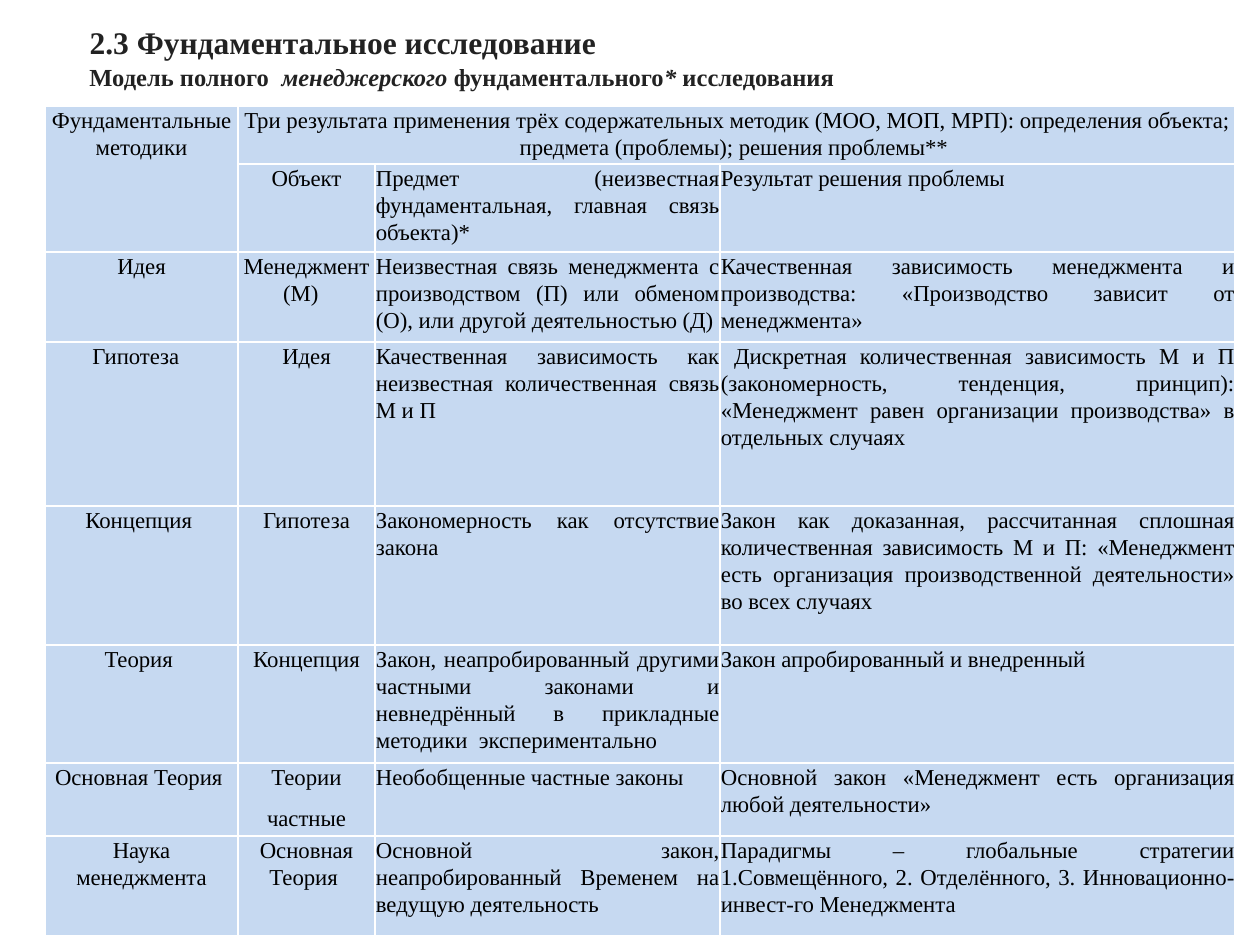
"""Build the slide with the table of the full model of fundamental research."""
from lxml.etree import SubElement
from pptx import Presentation
from pptx.dml.color import RGBColor
from pptx.enum.text import MSO_ANCHOR, MSO_AUTO_SIZE, PP_ALIGN
from pptx.oxml.ns import qn
from pptx.util import Emu, Pt

FONT = "Times New Roman"
INK = RGBColor(0x22, 0x22, 0x22)
BLACK = RGBColor(0, 0, 0)
WHITE = RGBColor(0xFF, 0xFF, 0xFF)
BLUE = RGBColor(0xC6, 0xD9, 0xF1)

TITLE = "2.3 Фундаментальное исследование"
MODEL = [
    ("Модель полного  ", False),
    ("менеджерского", True),
    (" фундаментального", False),
    ("*", True),
    (" исследования ", False),
]
COLS = [193, 137, 345, 515]
ROWS = [58, 88, 90, 164, 139, 118, 73, 100]
CELLS = [
    ["Фундаментальные методики",
     "Три результата применения трёх содержательных методик (МОО, МОП, МРП): "
     "определения объекта; предмета (проблемы); решения проблемы** ", "", ""],
    ["", "Объект",
     "Предмет (неизвестная фундаментальная, главная связь объекта)* ",
     "Результат решения проблемы"],
    ["Идея", "Менеджмент (М)  ",
     "Неизвестная связь менеджмента с производством (П) или обменом (О), "
     "или другой деятельностью (Д)",
     "Качественная зависимость менеджмента и производства: "
     "«Производство зависит от менеджмента» "],
    ["Гипотеза  ", "Идея",
     "Качественная зависимость как неизвестная количественная связь М и П",
     " Дискретная количественная зависимость М и П (закономерность, тенденция, "
     "принцип): «Менеджмент равен организации производства» в отдельных случаях"],
    ["Концепция ", "Гипотеза", "Закономерность как отсутствие закона",
     "Закон как доказанная, рассчитанная сплошная количественная зависимость "
     "М и П: «Менеджмент есть организация производственной деятельности» "
     "во всех случаях"],
    ["Теория ", "Концепция",
     "Закон, неапробированный другими частными законами и невнедрённый "
     "в прикладные методики  экспериментально ",
     "Закон апробированный и внедренный"],
    ["Основная Теория ", "Теории\nчастные", "Необобщенные частные законы",
     "Основной закон «Менеджмент есть организация любой деятельности» "],
    ["Наука менеджмента", "Основная Теория ",
     "Основной закон, неапробированный Временем на ведущую деятельность",
     "Парадигмы – глобальные стратегии 1.Совмещённого, 2. Отделённого, "
     "3. Инновационно-инвест-го Менеджмента"],
]


def px(n):
    return Emu(round(n * 914400 / 126))


def style(run, size, color, bold=False, italic=False):
    font = run.font
    font.name, font.size, font.bold, font.italic = FONT, Pt(size), bold, italic
    font.color.rgb = color


def head(shape, box, parts, size):
    shape.left, shape.top, shape.width, shape.height = map(px, box)
    frame = shape.text_frame
    frame.word_wrap = True
    frame.auto_size = MSO_AUTO_SIZE.NONE
    para = frame.paragraphs[0]
    para.alignment = PP_ALIGN.JUSTIFY
    para._p.get_or_add_pPr().set("indent", str(px(62)))
    for text, italic in parts:
        run = para.add_run()
        run.text = text
        style(run, size, INK, True, italic)


def border(cell):
    props = cell._tc.get_or_add_tcPr()
    for side in ("lnL", "lnR", "lnT", "lnB"):
        line = SubElement(props, qn(f"a:{side}"), w=str(Pt(1)))
        fill = SubElement(line, qn("a:solidFill"))
        SubElement(fill, qn("a:srgbClr"), val=str(WHITE))


def fill_cell(cell, text, align):
    border(cell)
    cell.fill.solid()
    cell.fill.fore_color.rgb = BLUE
    cell.margin_left = cell.margin_right = cell.margin_top = px(1)
    cell.margin_bottom = 0
    cell.text_frame.text = text
    for para in cell.text_frame.paragraphs:
        para.alignment = align
        para.line_spacing = 1.07
        para.space_after = Pt(8)
        for run in para.runs:
            style(run, 13, BLACK)


def align_at(row, col):
    if col < 2:
        return PP_ALIGN.CENTER
    return PP_ALIGN.LEFT if (row, col) == (1, 3) else PP_ALIGN.JUSTIFY


def add_grid(slide):
    box = map(px, (45, 106, sum(COLS), sum(ROWS)))
    table = slide.shapes.add_table(len(ROWS), len(COLS), *box).table
    table.first_row = table.horz_banding = False
    for col, width in zip(table.columns, COLS):
        col.width = px(width)
    for row, height in zip(table.rows, ROWS):
        row.height = px(height)
    for r, line in enumerate(CELLS):
        for c, text in enumerate(line):
            fill_cell(table.cell(r, c), text, align_at(r, c))
    table.cell(0, 0).merge(table.cell(1, 0))
    table.cell(0, 1).merge(table.cell(0, 3))


def main():
    deck = Presentation()
    deck.slide_width, deck.slide_height = px(1260), px(945)
    slide = deck.slides.add_slide(deck.slide_layouts[5])
    title = slide.shapes.title
    head(title, (15, 17, 1191, 50), [(TITLE, False)], 18)
    title.text_frame.vertical_anchor = MSO_ANCHOR.MIDDLE
    title.fill.solid()
    title.fill.fore_color.rgb = WHITE
    model = slide.shapes.add_textbox(0, 0, 0, 0)
    head(model, (15, 56, 1131, 43), MODEL, 14)
    add_grid(slide)
    deck.save("out.pptx")


if __name__ == "__main__":
    main()
